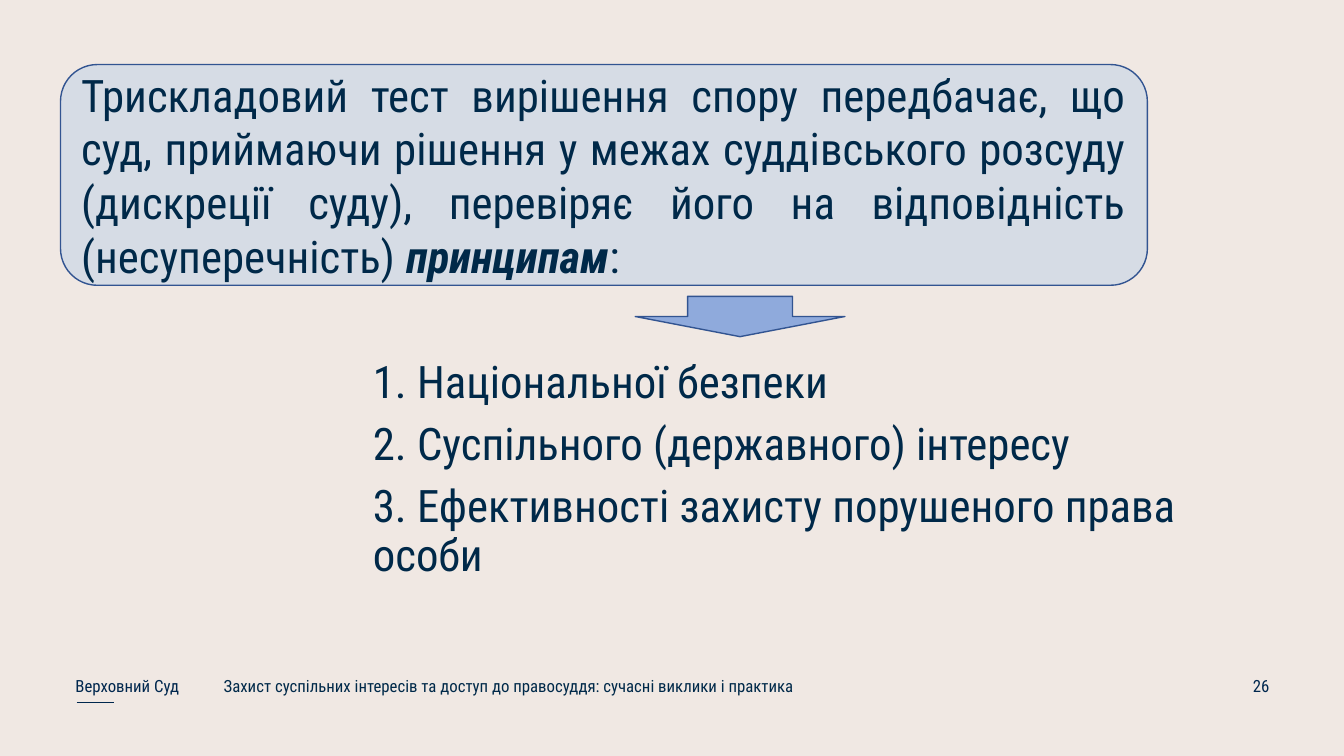
from dataclasses import dataclass

from lxml import etree
from pptx import Presentation
from pptx.dml.color import RGBColor
from pptx.enum.shapes import MSO_CONNECTOR, MSO_SHAPE
from pptx.enum.text import MSO_ANCHOR, MSO_AUTO_SIZE, PP_ALIGN
from pptx.oxml.ns import qn
from pptx.util import Inches, Pt

ROUNDED = MSO_SHAPE.ROUNDED_RECTANGLE
DOWN_ARROW = MSO_SHAPE.DOWN_ARROW
STRAIGHT = MSO_CONNECTOR.STRAIGHT
TOP, MIDDLE = MSO_ANCHOR.TOP, MSO_ANCHOR.MIDDLE
LEFT, RIGHT, JUSTIFY = PP_ALIGN.LEFT, PP_ALIGN.RIGHT, PP_ALIGN.JUSTIFY
GROW = MSO_AUTO_SIZE.SHAPE_TO_FIT_TEXT

TEST = [
    ("Трискладовий тест вирішення спору передбачає, що суд, приймаючи рішення "
     "у межах суддівського розсуду (дискреції суду), перевіряє його на "
     "відповідність (несуперечність) ", False),
    ("принципам", True),
    (":", False),
]
PRINCIPLES = [
    "1. Національної безпеки",
    "2. Суспільного (державного) інтересу",
    "3. Ефективності захисту порушеного права особи",
]
FOOTER = [
    ("Верховний Суд", (0.65, 6.57, 1.27, 0.44), "brand", LEFT, MIDDLE, 1.14),
    ("Захист суспільних інтересів та доступ до правосуддя: сучасні виклики і практика",
     (2.12, 6.68, 9.89, 0.35), "ink", JUSTIFY, TOP, 0.9),
    ("26", (12.21, 6.65, 0.48, 0.44), "brand", RIGHT, TOP, 1.0),
]
TEST_AREA = (0.6, 0.64, 10.78, 2.19)
ARROW_AREA = (6.3, 2.94, 2.08, 0.4)
LIST_AREA = (3.6, 3.75, 9.08, 1.78)
RULE = (0.76, 6.97, 1.13, 6.97)


@dataclass
class Theme:
    font: str = "Roboto Condensed"
    body: int = 32
    small: int = 12
    background: str = "F0E8E3"
    panel: str = "D6DCE5"
    arrow: str = "8FAADC"
    outline: str = "325491"
    ink: str = "002949"
    brand: str = "00274E"


theme = Theme()


def color(value):
    return RGBColor.from_string(value)


def inches(values):
    return [Inches(value) for value in values]


def add_block(page, kind, area, fill):
    block = page.shapes.add_shape(kind, *inches(area))
    block.shadow.inherit = False
    block.fill.solid()
    block.fill.fore_color.rgb = color(fill)
    block.line.color.rgb = color(theme.outline)
    block.line.width = Pt(1)
    return block


def write(box, paragraphs, size, ink, align, anchor, spacing, gap=0):
    frame = box.text_frame
    frame.word_wrap = True
    frame.vertical_anchor = anchor
    for index, runs in enumerate(paragraphs):
        para = frame.add_paragraph() if index else frame.paragraphs[0]
        para.alignment = align
        para.line_spacing = spacing
        para.space_before = Pt(gap if index else 0)
        for text, strong in runs:
            span = para.add_run()
            span.text = text
            span.font.name = theme.font
            span.font.size = Pt(size)
            span.font.color.rgb = color(ink)
            span.font.bold = span.font.italic = strong


def main():
    deck = Presentation()
    deck.slide_width, deck.slide_height = Inches(13.33), Inches(7.5)
    page = deck.slides.add_slide(deck.slide_layouts[6])
    page.background.fill.solid()
    page.background.fill.fore_color.rgb = color(theme.background)

    panel = add_block(page, ROUNDED, TEST_AREA, theme.panel)
    write(panel, [TEST], theme.body, theme.ink, JUSTIFY, MIDDLE, 1.0)

    principles = page.shapes.add_textbox(*inches(LIST_AREA))
    principles.text_frame.margin_bottom = 0
    principles.text_frame.auto_size = GROW
    write(principles, [[(text, False)] for text in PRINCIPLES],
          theme.body, theme.ink, LEFT, MIDDLE, 0.9, 10)

    add_block(page, DOWN_ARROW, ARROW_AREA, theme.arrow)

    for text, area, ink, align, anchor, spacing in FOOTER:
        box = page.shapes.add_textbox(*inches(area))
        write(box, [[(text, False)]], theme.small, getattr(theme, ink),
              align, anchor, spacing)

    rule = page.shapes.add_connector(STRAIGHT, *inches(RULE))
    rule.line.color.rgb = color(theme.brand)
    rule.line.width = Pt(1.12)
    etree.SubElement(rule._element.spPr, qn("a:effectLst"))

    deck.save("out.pptx")


if __name__ == "__main__":
    main()
